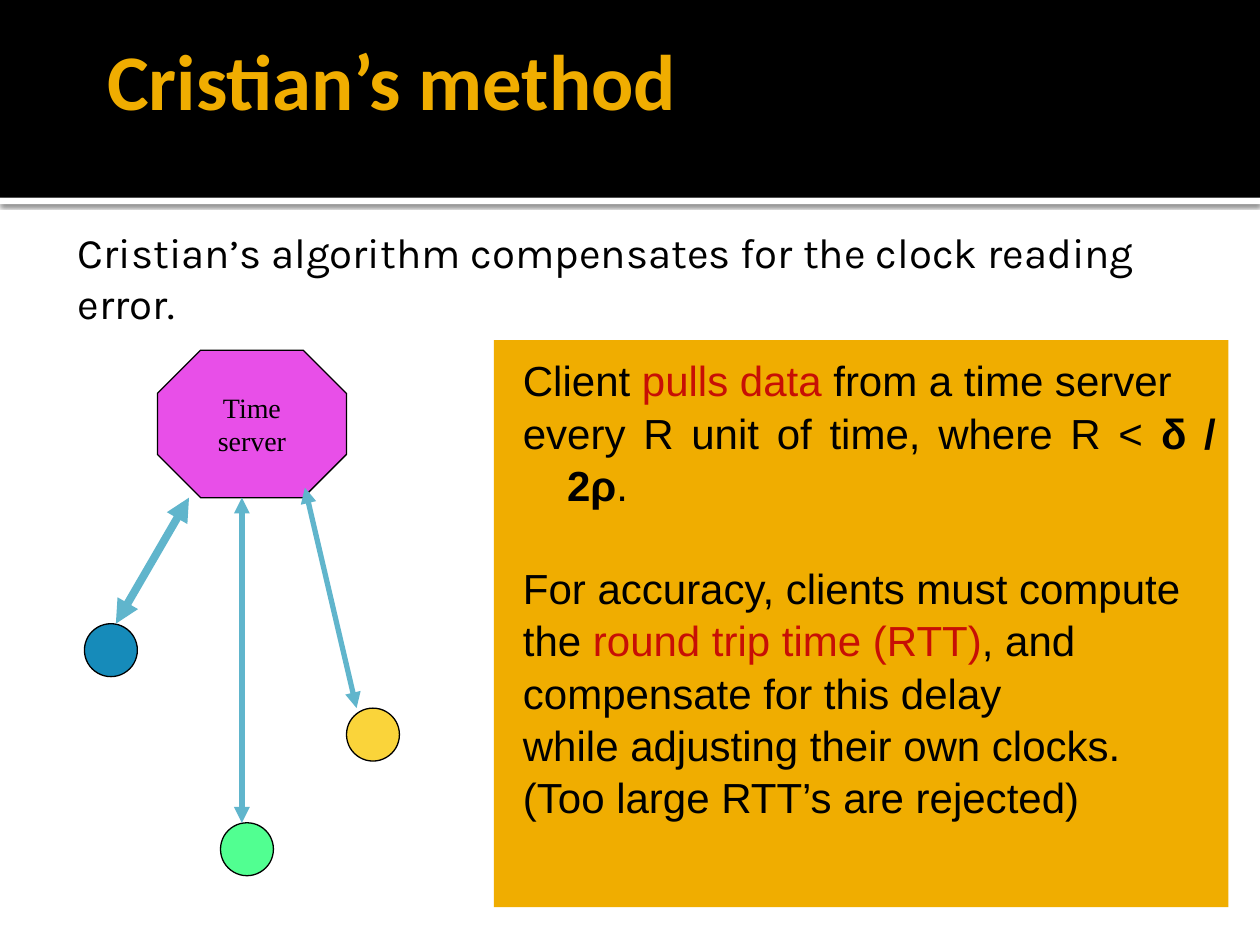
from lxml import etree
from pptx import Presentation
from pptx.dml.color import RGBColor
from pptx.enum.shapes import MSO_CONNECTOR, MSO_SHAPE
from pptx.enum.text import MSO_ANCHOR, MSO_AUTO_SIZE, PP_ALIGN
from pptx.oxml.ns import qn
from pptx.util import Inches, Pt

RECTANGLE, OCTAGON, OVAL = MSO_SHAPE.RECTANGLE, MSO_SHAPE.OCTAGON, MSO_SHAPE.OVAL
STRAIGHT = MSO_CONNECTOR.STRAIGHT
TOP, MIDDLE = MSO_ANCHOR.TOP, MSO_ANCHOR.MIDDLE
NO_AUTOFIT = MSO_AUTO_SIZE.NONE
LEFT, CENTER, JUSTIFY = PP_ALIGN.LEFT, PP_ALIGN.CENTER, PP_ALIGN.JUSTIFY

BLACK, WHITE, GOLD, RED, ARROW_BLUE = "000000", "FFFFFF", "F0AD00", "C70F05", "60B5CC"
LINE_SPACING = 1.04

# Each line holds (text, colour, bold) runs.
FIRST_POINT = [
    [("Client ", BLACK, False), ("pulls data", RED, False),
     (" from a time server", BLACK, False)],
    [("every R unit of time, where R < ", BLACK, False),
     ("δ / 2ρ", BLACK, True), (".", BLACK, False)],
]
SECOND_POINT = [
    [("For accuracy, clients must compute", BLACK, False)],
    [("the ", BLACK, False), ("round trip time (RTT)", RED, False),
     (", and", BLACK, False)],
    [("compensate for this delay ", BLACK, False)],
    [("while adjusting their own clocks. ", BLACK, False)],
    [("(Too large RTT’s are rejected)", BLACK, False)],
]


def color(hex_value):
    return RGBColor.from_string(hex_value)


def place(shape, box):
    shape.left, shape.top, shape.width, shape.height = map(Inches, box)


def add_run(paragraph, text, size, font_name, hex_value, bold=False):
    run = paragraph.add_run()
    run.text = text
    run.font.size = Pt(size)
    run.font.name = font_name
    run.font.bold = bold
    run.font.color.rgb = color(hex_value)


def set_frame(frame, anchor, insets=(0.1, 0.05, 0.1, 0.05), wrap=True):
    frame.word_wrap = wrap
    frame.auto_size = NO_AUTOFIT
    frame.vertical_anchor = anchor
    (frame.margin_left, frame.margin_top,
     frame.margin_right, frame.margin_bottom) = map(Inches, insets)


def add_filled(slide, preset, box, fill, outline=None):
    shape = slide.shapes.add_shape(preset, *map(Inches, box))
    shape.shadow.inherit = False
    shape.fill.solid()
    shape.fill.fore_color.rgb = color(fill)
    if outline:
        shape.line.color.rgb = color(outline)
        shape.line.width = Pt(0.75)
    else:
        shape.line.fill.background()
    return shape


def add_header(slide, box):
    """Black band with a shadowed white rule under it, behind the placeholders."""
    left, top, width, height = box
    rule = add_filled(slide, RECTANGLE, (left, top + height, width, 0.05), WHITE)
    band = add_filled(slide, RECTANGLE, box, BLACK)
    effects = rule._element.spPr.find(qn("a:effectLst"))
    shadow = etree.SubElement(effects, qn("a:outerShdw"), blurRad=str(Pt(2.5)),
                              dist=str(Pt(0.8)), dir="5400000", rotWithShape="0")
    shade = etree.SubElement(shadow, qn("a:srgbClr"), val=BLACK)
    etree.SubElement(shade, qn("a:alpha"), val="60000")
    for position, part in enumerate((rule, band), start=2):
        slide.shapes._spTree.insert(position, part._element)


def fill_title(title, box):
    place(title, box)
    set_frame(title.text_frame, MIDDLE, (0.1, 0.05, 0.05, 0.05))
    paragraph = title.text_frame.paragraphs[0]
    paragraph.alignment = LEFT
    add_run(paragraph, "Cristian’s method", 45, "Calibri", GOLD, True)


def fill_explanation(body, box):
    place(body, box)
    body.fill.solid()
    body.fill.fore_color.rgb = color(GOLD)
    frame = body.text_frame
    set_frame(frame, TOP, (0.1, 0.1, 0.1, 0.05))
    for number, line in enumerate(FIRST_POINT + SECOND_POINT):
        paragraph = frame.add_paragraph() if number else frame.paragraphs[0]
        paragraph.alignment = JUSTIFY
        paragraph.line_spacing = LINE_SPACING
        paragraph.space_before = Pt(28.8 if number == len(FIRST_POINT) else 0)
        properties = paragraph._p.get_or_add_pPr()
        properties.set("marL", str(Inches(0.48)))
        properties.set("indent", str(Inches(-0.35)))
        etree.SubElement(properties, qn("a:buNone"))
        for text, hex_value, bold in line:
            add_run(paragraph, text, 24, "Arial", hex_value, bold)


def add_two_way_arrow(slide, start, end, width):
    arrow = slide.shapes.add_connector(STRAIGHT, *map(Inches, start + end))
    arrow.line.color.rgb = color(ARROW_BLUE)
    arrow.line.width = Pt(width)
    line = arrow.line._get_or_add_ln()
    for tip in ("a:headEnd", "a:tailEnd"):
        etree.SubElement(line, qn(tip), type="triangle")
    etree.SubElement(arrow._element.spPr, qn("a:effectLst"))


def add_network(slide, box):
    """Time server above three clients, each joined to it by an arrow."""
    left, top = box[:2]
    server = add_filled(slide, OCTAGON, (left + 0.58, top, 1.5, 1.17), "E84FE8", BLACK)
    server.adjustments[0] = 0.293
    set_frame(server.text_frame, MIDDLE, wrap=False)
    for number, word in enumerate(("Time", "server")):
        frame = server.text_frame
        paragraph = frame.add_paragraph() if number else frame.paragraphs[0]
        paragraph.alignment = CENTER
        add_run(paragraph, word, 16, "Times New Roman", BLACK)

    # Client offset, fill, arrow start and end offsets, arrow width.
    clients = [
        ((0, 2.17), "168BBA", (0.25, 2.17), (0.83, 1.17), 4.5),
        ((1.08, 3.75), "51FF91", (1.25, 1.17), (1.25, 3.75), 3),
        ((2.08, 2.84), "FAD43A", (1.75, 1.09), (2.16, 2.84), 3),
    ]
    for (x, y), fill, start, end, width in clients:
        add_filled(slide, OVAL, (left + x, top + y, 0.42, 0.42), fill, BLACK)
        start, end = ((left + dx, top + dy) for dx, dy in (start, end))
        add_two_way_arrow(slide, start, end, width)


def add_summary(slide, box):
    summary = slide.shapes.add_textbox(*map(Inches, box))
    set_frame(summary.text_frame, TOP)
    add_run(summary.text_frame.paragraphs[0],
            "Cristian’s algorithm compensates for the clock reading error.",
            24, "Karla", BLACK)


def main():
    presentation = Presentation()
    presentation.slide_width, presentation.slide_height = Inches(10), Inches(7.5)
    slide = presentation.slides.add_slide(presentation.slide_layouts[1])
    add_header(slide, (0, 0, 10, 1.57))
    fill_title(slide.shapes.title, (0.75, 0, 8.5, 1.25))
    fill_explanation(slide.placeholders[1], (3.92, 2.7, 5.83, 4.5))
    add_network(slide, (0.67, 2.78, 2.5, 4.17))
    add_summary(slide, (0.52, 1.75, 9.08, 0.5))
    presentation.save("out.pptx")


if __name__ == "__main__":
    main()
